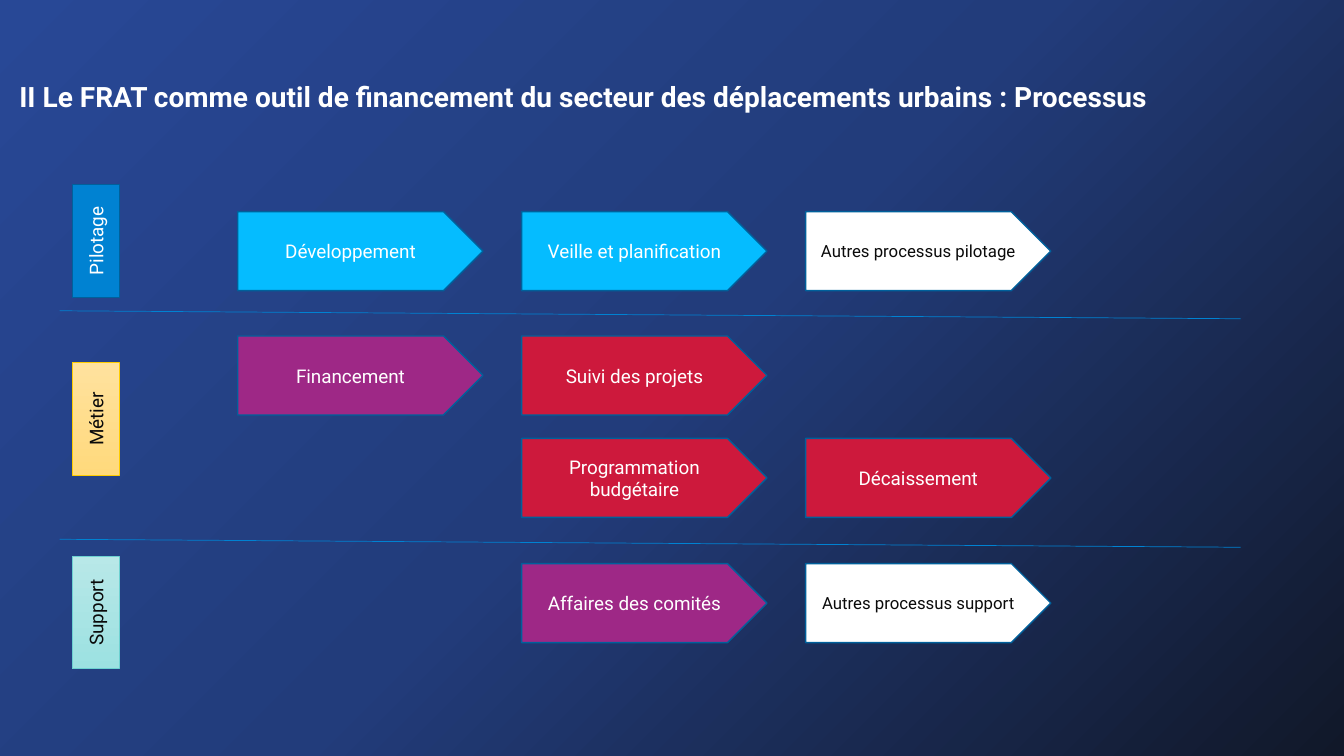
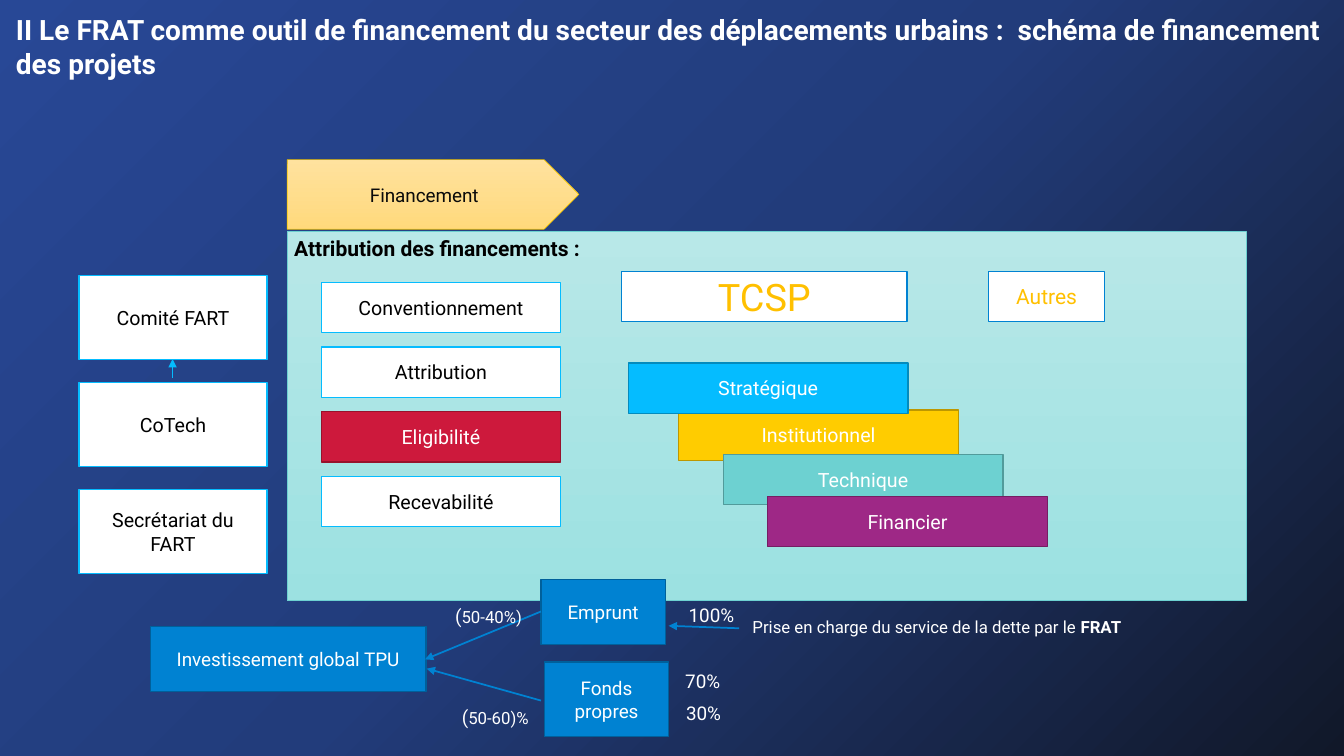
from copy import deepcopy

from lxml import etree
from pptx import Presentation
from pptx.dml.color import RGBColor
from pptx.enum.shapes import MSO_CONNECTOR, MSO_SHAPE
from pptx.enum.text import MSO_ANCHOR, MSO_AUTO_SIZE, PP_ALIGN
from pptx.oxml.ns import qn
from pptx.util import Pt

RECT, PENTAGON = MSO_SHAPE.RECTANGLE, MSO_SHAPE.PENTAGON
STRAIGHT = MSO_CONNECTOR.STRAIGHT
TOP, MIDDLE = MSO_ANCHOR.TOP, MSO_ANCHOR.MIDDLE
LEFT, CENTER = PP_ALIGN.LEFT, PP_ALIGN.CENTER
NO_FIT = MSO_AUTO_SIZE.NONE

# Square grid over the whole slide
CELL, COLUMNS, ROWS = Pt(6), 160, 90
TITLE_ONLY = 5
FONT = "Roboto"

WHITE = RGBColor(0xFF, 0xFF, 0xFF)
BLACK = RGBColor(0x00, 0x00, 0x00)
INK = RGBColor(0x0A, 0x0A, 0x0A)
ROYAL = RGBColor(0x28, 0x48, 0x96)
ROYAL_DIM = RGBColor(0x22, 0x3C, 0x7B)
NIGHT = RGBColor(0x11, 0x18, 0x29)
SKY = RGBColor(0x05, 0xBC, 0xFF)
SKY_DARK = RGBColor(0x04, 0x8B, 0xBD)
BLUE = RGBColor(0x00, 0x82, 0xD2)
BLUE_DARK = RGBColor(0x00, 0x60, 0x9B)
PURPLE = RGBColor(0x9E, 0x28, 0x86)
PURPLE_DARK = RGBColor(0x75, 0x1E, 0x63)
RED = RGBColor(0xCD, 0x19, 0x3C)
RED_DARK = RGBColor(0x98, 0x12, 0x2C)
YELLOW = RGBColor(0xFF, 0xCC, 0x00)
YELLOW_DARK = RGBColor(0xBD, 0x97, 0x00)
AMBER = RGBColor(0xFF, 0xC0, 0x00)
TEAL = RGBColor(0x6D, 0xD1, 0xD1)
TEAL_DARK = RGBColor(0x51, 0x9B, 0x9B)
SAND = (RGBColor(0xFF, 0xE2, 0x9E), RGBColor(0xFF, 0xD9, 0x7C))
MINT = (RGBColor(0xB8, 0xE8, 0xE8), RGBColor(0x9C, 0xE1, 0xE1))

NO_MARGINS = dict.fromkeys(
    ("margin_left", "margin_top", "margin_right", "margin_bottom"), 0)
TITLE_FRAME = {**NO_MARGINS, "word_wrap": True, "auto_size": NO_FIT,
               "vertical_anchor": TOP}
PANEL_FRAME = {"margin_left": Pt(5), "margin_top": Pt(3),
               "vertical_anchor": TOP}


def apply(target, values):
    for name, value in values.items():
        setattr(target, name, value)


def grid(*cells):
    return [round(cell * CELL) for cell in cells]


class Deck:
    """Holds the shared style and the current slide."""

    def __init__(self):
        self.prs = Presentation()
        self.prs.slide_width, self.prs.slide_height = grid(COLUMNS, ROWS)
        self.slide = None
        self.set_background()

    def set_background(self):
        master = self.prs.slide_master
        fill = master.background.fill
        self.paint(fill, (ROYAL, NIGHT), angle=315)
        # The middle stop makes the blue darken late
        stops = master.element.find(".//" + qn("p:bg")).find(
            ".//" + qn("a:gsLst"))
        stops.insert(1, deepcopy(stops[0]))
        middle = fill.gradient_stops[1]
        middle.position, middle.color.rgb = 0.5, ROYAL_DIM

    def paint(self, fill, color, angle=270):
        if isinstance(color, RGBColor):
            fill.solid()
            fill.fore_color.rgb = color
            return
        fill.gradient()
        fill.gradient_angle = angle
        for position, (stop, rgb) in enumerate(zip(fill.gradient_stops, color)):
            stop.position, stop.color.rgb = position, rgb

    def add_text(self, frame, text, size, color, bold=False,
                 **paragraph_format):
        """Text is one string, or a list of (string, font values) runs."""
        paragraph = frame.paragraphs[0]
        apply(paragraph, paragraph_format)
        runs = [(text, {})] if isinstance(text, str) else text
        for words, changes in runs:
            run = paragraph.add_run()
            run.text = words
            apply(run.font, {"name": FONT, "size": Pt(size), "bold": bold,
                             **changes})
            run.font.color.rgb = color

    def new_slide(self, title, area, **paragraph_format):
        layout = self.prs.slide_layouts[TITLE_ONLY]
        self.slide = self.prs.slides.add_slide(layout)
        heading = self.slide.shapes.title
        apply(heading, dict(zip(("left", "top", "width", "height"), grid(*area))))
        apply(heading.text_frame, TITLE_FRAME)
        self.add_text(heading.text_frame, title, 20, WHITE, True,
                      alignment=LEFT, **paragraph_format)

    def box(self, text, area, fill, line, color=WHITE, size=13.5, kind=RECT,
            weight=1, bold=False, align=CENTER, frame=None, upward=False):
        shape = self.slide.shapes.add_shape(kind, *grid(*area))
        shape.shadow.inherit = False
        self.paint(shape.fill, fill)
        shape.line.color.rgb, shape.line.width = line, Pt(weight)
        apply(shape.text_frame, {"word_wrap": True, "vertical_anchor": MIDDLE,
                                 **(frame or {})})
        if upward:
            shape.text_frame._txBody.bodyPr.set("vert", "vert270")
        self.add_text(shape.text_frame, text, size, color, bold,
                      alignment=align)

    def label(self, text, area, size=13.5):
        frame = self.slide.shapes.add_textbox(*grid(*area)).text_frame
        frame.word_wrap = True
        self.add_text(frame, text, size, WHITE)

    def line(self, start, end, color=BLUE, weight=1.25, arrow=True):
        link = self.slide.shapes.add_connector(STRAIGHT, *grid(*start, *end))
        link.line.color.rgb, link.line.width = color, Pt(weight)
        properties = link._element.spPr
        if arrow:
            etree.SubElement(properties.find(qn("a:ln")), qn("a:tailEnd"),
                             type="triangle")
        etree.SubElement(properties, qn("a:effectLst"))


def process_map(deck):
    deck.new_slide(
        "II Le FRAT comme outil de financement du secteur des déplacements "
        "urbains : Processus",
        (2.3, 4.8, 154.2, 11.3), line_spacing=Pt(52))

    # Processes: text, column, row top, fill
    processes = [
        ("Développement", 0, 25.2, SKY),
        ("Veille et planification", 1, 25.2, SKY),
        ("Autres processus pilotage", 2, 25.2, WHITE),
        ("Financement", 0, 40, PURPLE),
        ("Suivi des projets", 1, 40, RED),
        ("Programmation budgétaire", 1, 52.2, RED),
        ("Décaissement", 2, 52.2, RED),
        ("Affaires des comités", 1, 67.1, PURPLE),
        ("Autres processus support", 2, 67.1, WHITE),
    ]
    for text, column, top, fill in processes:
        color, size = (INK, 12) if fill == WHITE else (WHITE, 13.5)
        deck.box(text, (28.3 + 33.8 * column, top, 29.2, 9.4), fill, BLUE_DARK,
                 color, size, PENTAGON)

    # Separators between the families
    for top in (37, 64.2):
        deck.line((7.1, top), (147.7, top + 0.95), weight=0.5, arrow=False)

    # Process families
    families = [
        ("Pilotage", 22, BLUE, BLUE_DARK, WHITE, 1),
        ("Métier", 43.2, SAND, YELLOW, INK, 0.5),
        ("Support", 66.2, MINT, TEAL, INK, 0.5),
    ]
    for text, top, fill, line, color, weight in families:
        deck.box(text, (8.6, top, 5.6, 13.4), fill, line, color,
                 weight=weight, upward=True)


def funding_scheme(deck):
    deck.new_slide(
        "II Le FRAT comme outil de financement du secteur des déplacements "
        "urbains :  schéma de financement des projets",
        (1.9, 1.5, 155.8, 10.8))

    # Funding panel and its tab
    deck.box("Attribution des financements :", (34.2, 27.5, 114.2, 44), MINT,
             TEAL, BLACK, 15, weight=0.5, bold=True, align=LEFT,
             frame=PANEL_FRAME)
    deck.box("Financement", (34.2, 19, 34.7, 8.3), SAND, YELLOW, INK,
             kind=PENTAGON, weight=0.5)

    # Steps of the award
    steps = ("Conventionnement", "Attribution", "Eligibilité", "Recevabilité")
    for index, step in enumerate(steps):
        colors = ((RED, RED_DARK, WHITE) if step == "Eligibilité"
                  else (WHITE, SKY, BLACK))
        deck.box(step, (38.3, 33.6 + 7.7 * index, 28.4, 6), *colors, size=14)

    # Eligibility criteria, the first one in front of the second
    criteria = [
        ("Institutionnel", 80.8, 48.8, YELLOW, YELLOW_DARK),
        ("Technique", 86.1, 54.1, TEAL, TEAL_DARK),
        ("Financier", 91.4, 59.1, PURPLE, PURPLE_DARK),
        ("Stratégique", 74.8, 43.2, SKY, SKY_DARK),
    ]
    for text, left, top, fill, line in criteria:
        deck.box(text, (left, top, 33.3, 6), fill, line, size=14)

    # Project types
    for text, left, width, size in (("TCSP", 74, 34, 27),
                                    ("Autres", 117.7, 13.8, 15)):
        deck.box(text, (left, 32.3, width, 6), WHITE, BLUE, AMBER, size)

    # Governing bodies
    bodies = ("Comité FART", "CoTech", "Secrétariat du FART")
    for index, body in enumerate(bodies):
        deck.box(body, (9.4, 32.8 + 12.75 * index, 22.4, 10), WHITE, SKY,
                 BLACK, 14)
    deck.line((20.55, 45), (20.55, 42.75), SKY, 0.5)

    # Sources of the investment
    for text, area in (("Investissement global TPU", (17.9, 74.6, 32.8, 7.7)),
                       ("Emprunt", (64.4, 69, 14.8, 7.7)),
                       ("Fonds propres", (64.8, 78.8, 14.8, 8.9))):
        deck.box(text, area, BLUE, BLUE_DARK)
    for start, end in (((64.4, 72.8), (50.6, 78.5)),
                       ((64.4, 83.4), (50.8, 79.6)),
                       ((88, 74.8), (79.6, 74.5))):
        deck.line(start, end)

    # Shares and debt service
    small = {"size": Pt(12)}
    deck.label([("(", {}), ("50-40%)", small)], (53, 71.4, 11.6, 4))
    deck.label([("(", {}), ("50-60)%", small)], (53.8, 83.4, 11.6, 4))
    deck.label("100%", (80.8, 71.3, 9.7, 4))
    deck.label("70%", (80.4, 79.1, 7.7, 4))
    deck.label("30%", (80.5, 82.9, 7.7, 4))
    deck.label([("Prise en charge du service de la dette par le ", {}),
                ("FRAT", {"bold": True})], (88.4, 72.8, 51, 3.6), 12)


def main():
    deck = Deck()
    process_map(deck)
    funding_scheme(deck)
    deck.prs.save("out.pptx")


if __name__ == "__main__":
    main()
